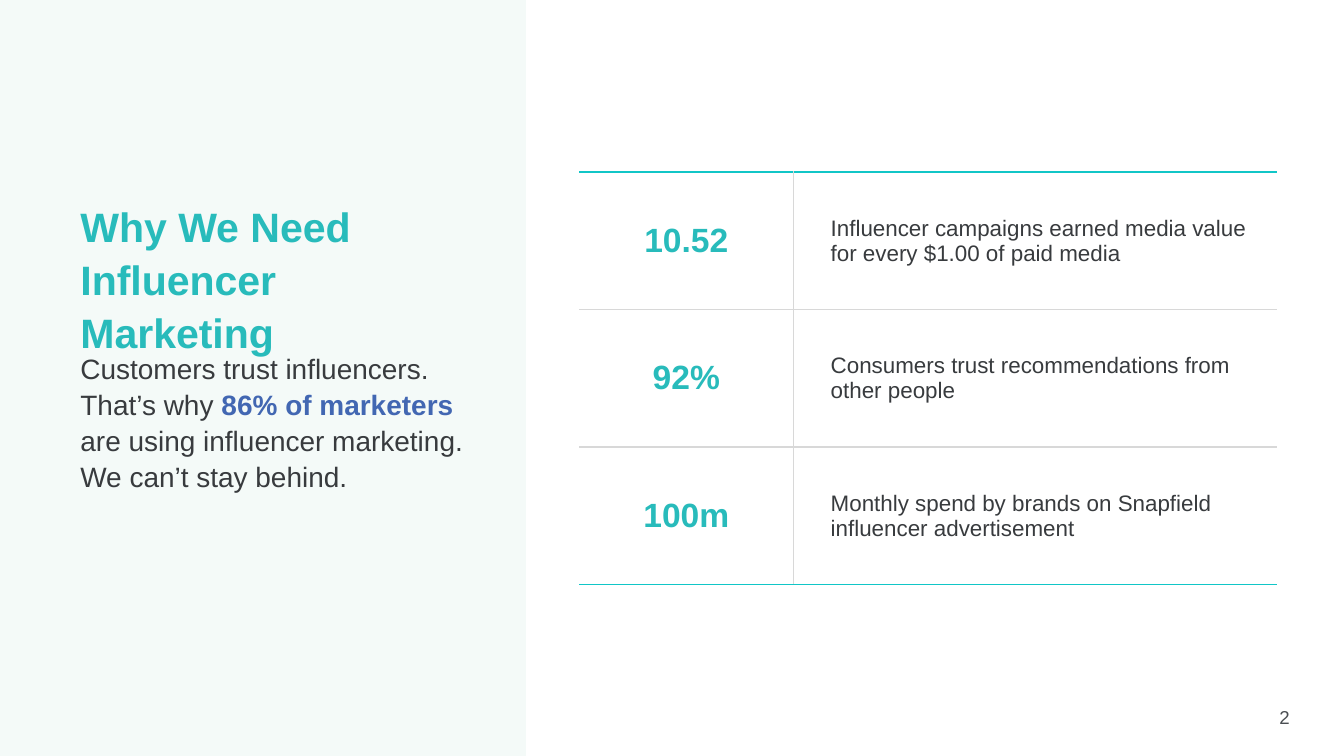
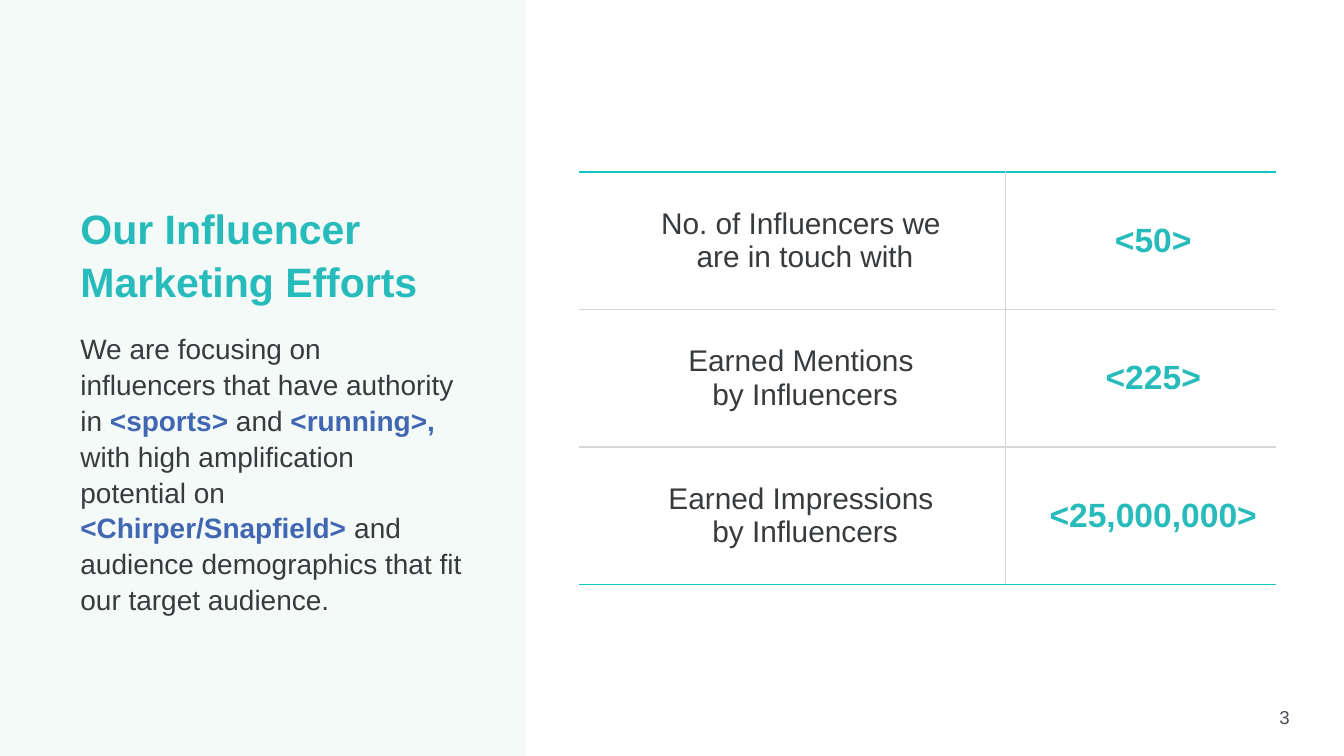
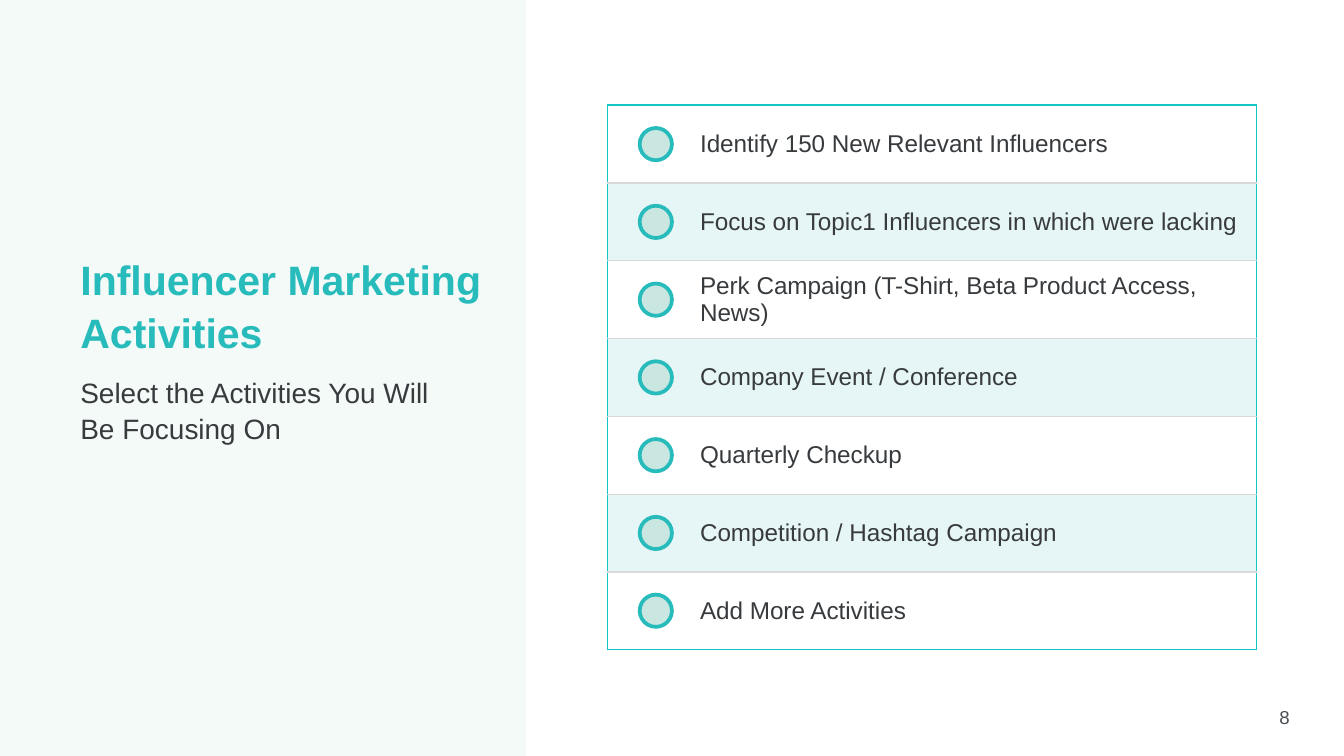
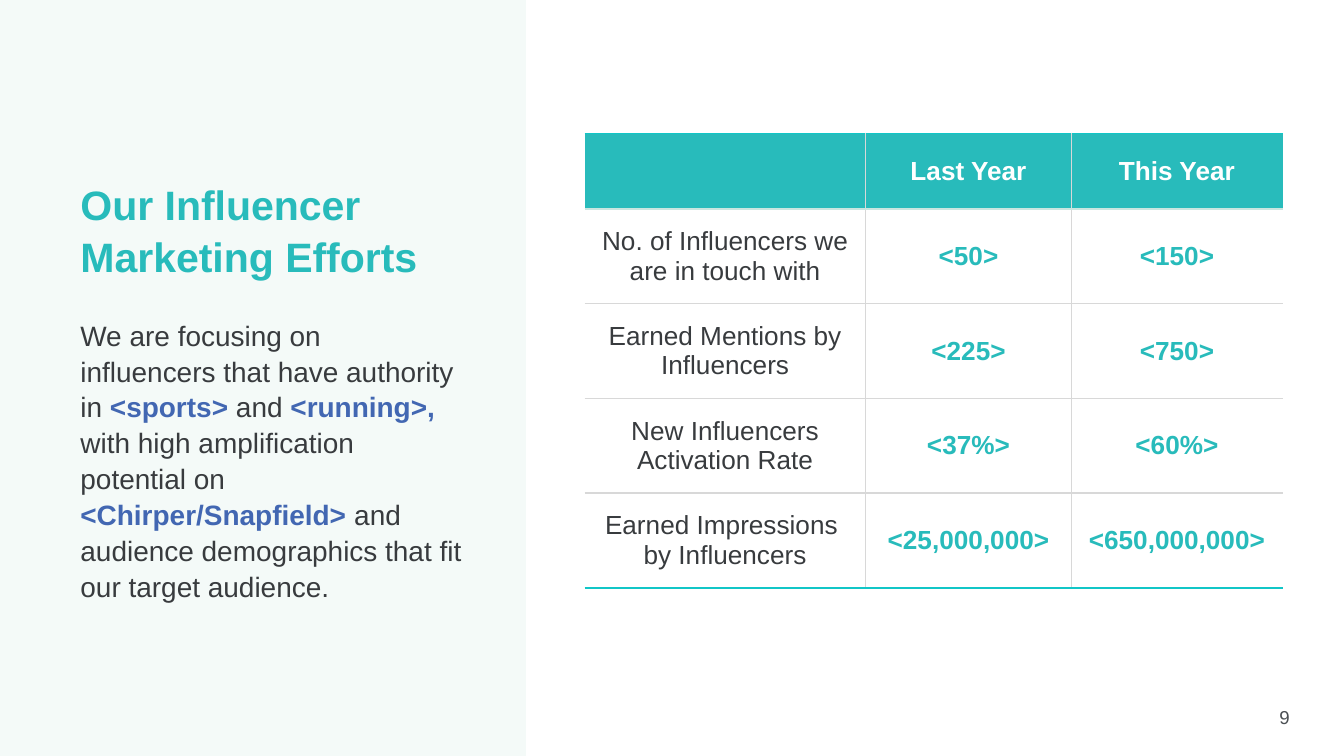
from lxml.etree import SubElement
from pptx import Presentation
from pptx.dml.color import RGBColor
from pptx.enum.shapes import MSO_SHAPE
from pptx.enum.text import MSO_ANCHOR, MSO_AUTO_SIZE, PP_ALIGN
from pptx.oxml import parse_xml
from pptx.oxml.ns import nsdecls, qn
from pptx.util import Cm, Pt

COLORS = {
    "teal": "28BBBB",
    "edge": "11C6C7",
    "mint": "C9E6E0",
    "stripe": "E6F5F5",
    "rule": "D8D8D8",
    "text": "383B3E",
    "accent": "4267B2",
    "page": "4B4F53",
    "white": "FFFFFF",
}
STYLES = {
    "title": {"size": 22, "color": "teal", "bold": True},
    "body": {"size": 15, "color": "text", "bold": False},
    "emphasis": {"size": 15, "color": "accent", "bold": True},
    "page": {"size": 10, "color": "page", "bold": False},
    "figure": {"size": 18, "color": "teal", "bold": True},
    "note": {"size": 12, "color": "text", "bold": False},
    "measure": {"size": 16, "color": "text", "bold": False},
    "activity": {"size": 13, "color": "text", "bold": False},
    "header": {"size": 14, "color": "white", "bold": True},
    "row label": {"size": 14, "color": "text", "bold": False},
    "amount": {"size": 14, "color": "teal", "bold": True},
}
SLIDE_WIDTH, SLIDE_HEIGHT = 25.4, 14.29
BAND_WIDTH = 9.94
TEXT_LEFT, TEXT_WIDTH = 1.27, 7.75
INSET = 0.25
PANEL_SPACING = 1.07
MARGINS = ("margin_left", "margin_top", "margin_right", "margin_bottom")
CELL_INSETS = (0.23,) * 4

OUTER_LINE = ("edge", 1)
INNER_LINE = ("rule", 0.75)
HEADER_LINE = ("mint", 1)

EFFORTS_TITLE = [["Our Influencer Marketing Efforts"]]
EFFORTS_BODY = [[
    "We are focusing on influencers that have authority in ", "<sports> ",
    "and ", "<running>, ",
    "with high amplification potential on ", "<Chirper/Snapfield> ",
    "and audience demographics that fit our target audience.",
]]


def rgb(name):
    return RGBColor.from_string(COLORS[name])


def set_values(target, values):
    for name, value in values.items():
        setattr(target, name, value)


def set_margins(target, insets):
    set_values(target, dict(zip(MARGINS, map(Cm, insets))))


def lengths(box):
    return [Cm(value) for value in box]


def write(frame, paragraphs, style, align=PP_ALIGN.LEFT, indent=0, spacing=None):
    """Fill the frame; every second run of a paragraph is emphasised."""
    for number, runs in enumerate(paragraphs):
        paragraph = frame.add_paragraph() if number else frame.paragraphs[0]
        set_values(paragraph, {"alignment": align, "line_spacing": spacing})
        if indent:
            properties = paragraph._p.get_or_add_pPr()
            properties.set("marL", str(Cm(indent)))
            properties.set("indent", "0")
        for position, text in enumerate(runs):
            run = paragraph.add_run()
            run.text = text
            look = STYLES["emphasis" if position % 2 else style]
            set_values(run.font, {"name": "Arial", "size": Pt(look["size"]),
                                  "bold": look["bold"]})
            run.font.color.rgb = rgb(look["color"])


def set_frame(frame, insets):
    set_values(frame, {"word_wrap": True, "auto_size": MSO_AUTO_SIZE.NONE,
                       "vertical_anchor": MSO_ANCHOR.TOP})
    set_margins(frame, insets)


def add_text(slide, box, paragraphs, style, insets=(INSET,) * 4, **layout):
    frame = slide.shapes.add_textbox(*lengths(box)).text_frame
    set_frame(frame, insets)
    write(frame, paragraphs, style, **layout)


def add_filled_shape(slide, kind, box, color):
    shape = slide.shapes.add_shape(kind, *lengths(box))
    shape.shadow.inherit = False
    shape.fill.solid()
    shape.fill.fore_color.rgb = rgb(color)
    return shape


def add_band(slide):
    """Put the pale side band behind the title."""
    band = add_filled_shape(slide, MSO_SHAPE.RECTANGLE,
                            (0, 0, BAND_WIDTH, SLIDE_HEIGHT), "mint")
    band.line.fill.background()
    tint = band.element.spPr.find(qn("a:solidFill"))[0]
    SubElement(tint, qn("a:alpha"), val="20000")
    slide.shapes.title.element.addprevious(band.element)


def add_side_slide(deck, page, title, title_box, body, body_box):
    slide = deck.slides.add_slide(deck.slide_layouts[5])
    heading = slide.shapes.title
    set_values(heading, dict(zip(("left", "top", "width", "height"),
                                 lengths(title_box))))
    set_frame(heading.text_frame, (INSET,) * 4)
    write(heading.text_frame, title, "title", spacing=PANEL_SPACING)
    add_band(slide)
    add_text(slide, body_box, body, "body", spacing=PANEL_SPACING)
    add_text(slide, (23.6, 13.21, 1.35, 0.69), [[page]], "page",
             insets=(0.25, 0.13, 0.25, 0.13), align=PP_ALIGN.CENTER)
    return slide


def border(side, line):
    if line is None:
        return parse_xml(f'<a:{side} {nsdecls("a")} w="0"><a:noFill/></a:{side}>')
    color, width = line
    return parse_xml(
        f'<a:{side} {nsdecls("a")} w="{Pt(width)}"><a:solidFill>'
        f'<a:srgbClr val="{COLORS[color]}"/></a:solidFill></a:{side}>')


def rule_table(table, horizontals, verticals):
    """Draw the grid from its lines, listed top to bottom and left to right."""
    for r, row in enumerate(table.rows):
        for c, cell in enumerate(row.cells):
            sides = {"lnL": verticals[c], "lnR": verticals[c + 1],
                     "lnT": horizontals[r], "lnB": horizontals[r + 1]}
            properties = cell._tc.get_or_add_tcPr()
            for index, (side, line) in enumerate(sides.items()):
                properties.insert(index, border(side, line))


def add_plain_table(slide, corner, widths, heights):
    box = (*corner, sum(widths), sum(heights))
    table = slide.shapes.add_table(len(heights), len(widths), *lengths(box)).table
    set_values(table, {"first_row": False, "horz_banding": False})
    for column, width in zip(table.columns, widths):
        column.width = Cm(width)
    for row, height in zip(table.rows, heights):
        row.height = Cm(height)
    return table


def fill_cell(cell, paragraphs, style, fill=None, insets=CELL_INSETS, **layout):
    cell.vertical_anchor = MSO_ANCHOR.MIDDLE
    set_margins(cell, insets)
    if fill:
        cell.fill.solid()
        cell.fill.fore_color.rgb = rgb(fill)
    else:
        cell.fill.background()
    write(cell.text_frame, paragraphs, style, **layout)


def add_fact_table(slide, corner, widths, facts, columns):
    """Two columns of facts; columns gives the text layout of each."""
    table = add_plain_table(slide, corner, widths, [2.6] * len(facts))
    for row, fact in zip(table.rows, facts):
        for cell, lines, layout in zip(row.cells, fact, columns):
            fill_cell(cell, [[line] for line in lines], **layout)
    inner = [INNER_LINE] * (len(facts) - 1)
    rule_table(table, [OUTER_LINE, *inner, OUTER_LINE], [None, INNER_LINE, None])


def add_checklist(slide, box, activities):
    left, top, width, height = box
    step = height / len(activities)
    table = add_plain_table(slide, (left, top), [width], [step] * len(activities))
    for number, (row, activity) in enumerate(zip(table.rows, activities)):
        fill_cell(row.cells[0], [[activity]], "activity",
                  fill="stripe" if number % 2 else "white",
                  insets=(0.25, 0.13, 0.25, 0.13), indent=1.5)
    inner = [INNER_LINE] * (len(activities) - 1)
    rule_table(table, [OUTER_LINE, *inner, OUTER_LINE], [OUTER_LINE] * 2)

    size = 0.61
    for number in range(len(activities)):
        circle_top = top + number * step + (step - size) / 2
        circle = add_filled_shape(slide, MSO_SHAPE.OVAL,
                                  (left + 0.61, circle_top, size, size), "mint")
        circle.line.color.rgb = rgb("teal")
        circle.line.width = Pt(2)


def add_year_table(slide, corner, widths, years, measures):
    heights = [1.43] + [1.79] * len(measures)
    table = add_plain_table(slide, corner, widths, heights)
    for cell, year in zip(table.rows[0].cells, ("", *years)):
        fill_cell(cell, [[year]] if year else [], "header", fill="teal",
                  align=PP_ALIGN.CENTER)
    for r, (label, *amounts) in enumerate(measures, 1):
        fill_cell(table.cell(r, 0), [[line] for line in label], "row label",
                  align=PP_ALIGN.CENTER)
        for c, amount in enumerate(amounts, 1):
            fill_cell(table.cell(r, c), [[amount]], "amount", align=PP_ALIGN.CENTER)
    rule_table(table,
               [OUTER_LINE, HEADER_LINE, *[INNER_LINE] * (len(measures) - 1), OUTER_LINE],
               [None, *[INNER_LINE] * len(years), None])


def add_why_slide(deck):
    slide = add_side_slide(
        deck, "2",
        [["Why We Need"], ["Influencer Marketing"]],
        (TEXT_LEFT, 3.5, TEXT_WIDTH, 2.64),
        [["Customers trust influencers. That’s why ", "86% of marketers ",
          "are using influencer marketing."],
         ["We can’t stay behind."]],
        (TEXT_LEFT, 6.35, TEXT_WIDTH, 3.25))
    facts = [
        (["10.52"], ["Influencer campaigns earned media value",
                     "for every $1.00 of paid media"]),
        (["92%"], ["Consumers trust recommendations from", "other people"]),
        (["100m"], ["Monthly spend by brands on Snapfield influencer advertisement"]),
    ]
    add_fact_table(slide, (10.95, 3.25), (4.04, 9.14), facts,
                   ({"style": "figure", "align": PP_ALIGN.CENTER},
                    {"style": "note", "indent": 0.48}))


def add_efforts_slide(deck):
    slide = add_side_slide(deck, "3",
                           EFFORTS_TITLE, (TEXT_LEFT, 3.53, TEXT_WIDTH, 2.64),
                           EFFORTS_BODY, (TEXT_LEFT, 5.97, TEXT_WIDTH, 4.95))
    facts = [
        (["No. of Influencers we ", "are in touch with"], ["<50>"]),
        (["Earned Mentions ", "by Influencers"], ["<225>"]),
        (["Earned Impressions ", "by Influencers"], ["<25,000,000>"]),
    ]
    centred = {"align": PP_ALIGN.CENTER, "indent": 0.48}
    add_fact_table(slide, (10.95, 3.25), (8.05, 5.11), facts,
                   ({"style": "measure", **centred}, {"style": "figure", **centred}))


def add_activities_slide(deck):
    slide = add_side_slide(
        deck, "8",
        [["Influencer Marketing Activities"]], (TEXT_LEFT, 4.5, 8.28, 2.41),
        [["Select the Activities You Will Be Focusing On"]],
        (TEXT_LEFT, 6.81, 7.26, 1.96))
    add_checklist(slide, (11.48, 1.99, 12.27, 10.29), [
        "Identify 150 New Relevant Influencers",
        "Focus on Topic1 Influencers in which were lacking",
        "Perk Campaign (T-Shirt, Beta Product Access, News)",
        "Company Event / Conference",
        "Quarterly Checkup",
        "Competition / Hashtag Campaign",
        "Add More Activities",
    ])


def add_comparison_slide(deck):
    slide = add_side_slide(deck, "9",
                           EFFORTS_TITLE, (TEXT_LEFT, 3.07, TEXT_WIDTH, 2.64),
                           EFFORTS_BODY, (TEXT_LEFT, 5.72, TEXT_WIDTH, 4.95))
    add_year_table(slide, (11.05, 2.52), (5.31, 3.89, 3.99),
                   ("Last Year", "This Year"), [
        (["No. of Influencers we are in touch with"], "<50>", "<150>"),
        (["Earned Mentions by Influencers"], "<225>", "<750>"),
        (["New Influencers Activation Rate"], "<37%>", "<60%>"),
        (["Earned Impressions ", "by Influencers"], "<25,000,000>", "<650,000,000>"),
    ])


def main():
    deck = Presentation()
    set_values(deck, {"slide_width": Cm(SLIDE_WIDTH), "slide_height": Cm(SLIDE_HEIGHT)})
    add_why_slide(deck)
    add_efforts_slide(deck)
    add_activities_slide(deck)
    add_comparison_slide(deck)
    deck.save("out.pptx")


if __name__ == "__main__":
    main()
